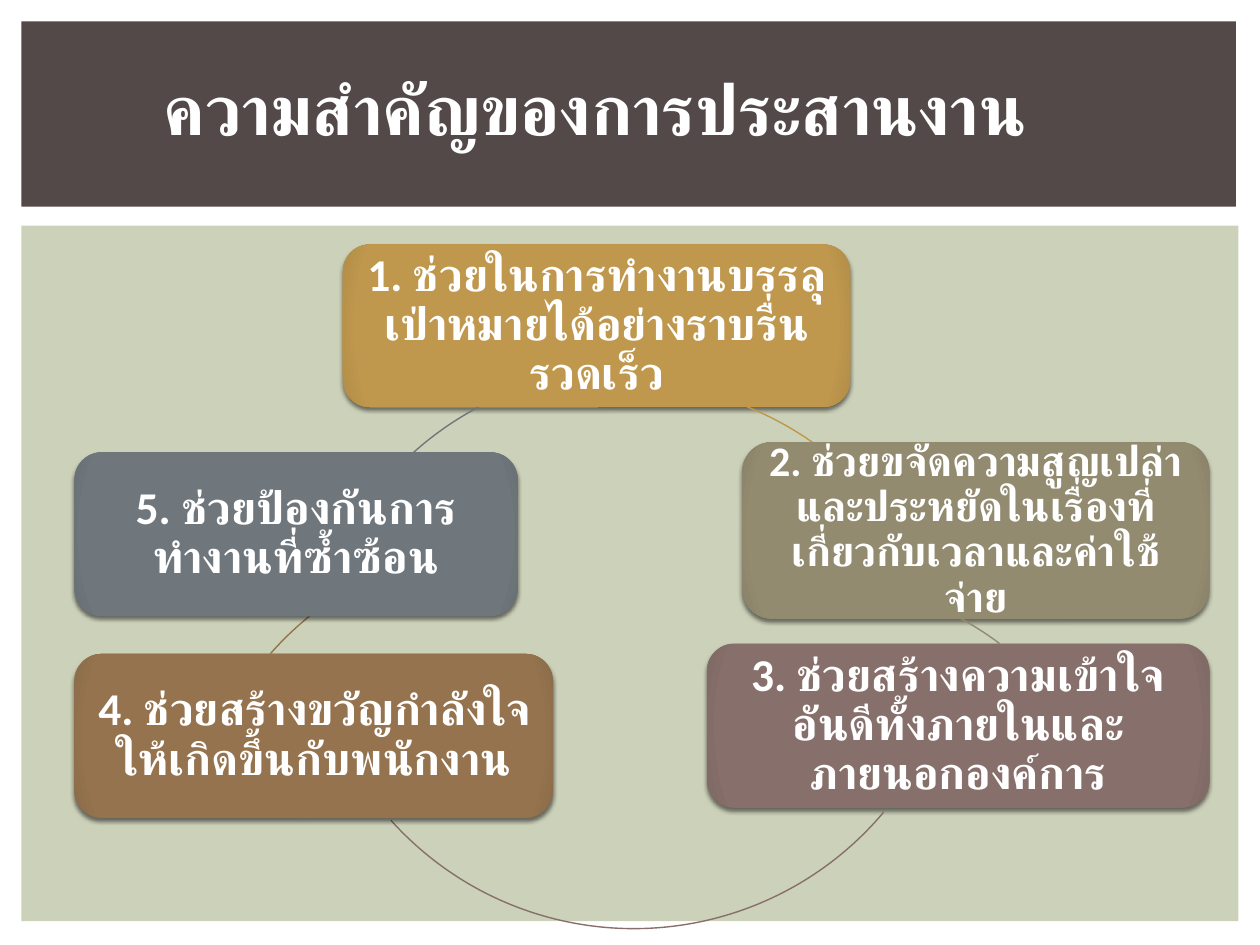
import pptx
import pptx.dml.color
import pptx.enum.shapes
import pptx.enum.text
import pptx.oxml
import pptx.oxml.ns
import pptx.util

Inches = pptx.util.Inches
Pt = pptx.util.Pt
RGBColor = pptx.dml.color.RGBColor
MSO_SHAPE = pptx.enum.shapes.MSO_SHAPE
MSO_ANCHOR = pptx.enum.text.MSO_ANCHOR
MSO_AUTO_SIZE = pptx.enum.text.MSO_AUTO_SIZE
PP_ALIGN = pptx.enum.text.PP_ALIGN

WHITE = RGBColor(0xFF, 0xFF, 0xFF)
SAGE = RGBColor(0xCC, 0xD1, 0xB9)
CHARCOAL = RGBColor(0x53, 0x49, 0x49)
GOLD = RGBColor(0xBF, 0x97, 0x4D)
GOLD_EDGE = RGBColor(0xB2, 0x8D, 0x48)
OLIVE = RGBColor(0x92, 0x8B, 0x70)
OLIVE_EDGE = RGBColor(0x88, 0x82, 0x68)
MAUVE = RGBColor(0x87, 0x70, 0x6B)
MAUVE_EDGE = RGBColor(0x7E, 0x68, 0x64)
BROWN = RGBColor(0x94, 0x73, 0x4E)
BROWN_EDGE = RGBColor(0x8A, 0x6B, 0x49)
SLATE = RGBColor(0x6F, 0x77, 0x7D)
SLATE_EDGE = RGBColor(0x67, 0x6F, 0x74)

RING_SIZE = 5.18
TEXT_MARGIN = 0.065
NAMESPACE = pptx.oxml.ns.nsdecls("a")
GRADIENT = (
    "<a:gradFill {0}><a:gsLst>"
    '<a:gs pos="0"><a:srgbClr val="{1}"/></a:gs>'
    '<a:gs pos="90000"><a:srgbClr val="{1}"/></a:gs>'
    '<a:gs pos="100000"><a:srgbClr val="{2}"/></a:gs></a:gsLst>'
    '<a:path path="circle">'
    '<a:fillToRect l="100000" t="100000" r="100000" b="100000"/>'
    "</a:path></a:gradFill>"
)
SHADOW = (
    '<a:outerShdw {} blurRad="31750" dist="25400" dir="5400000" rotWithShape="0">'
    '<a:srgbClr val="000000"><a:alpha val="50000"/></a:srgbClr></a:outerShdw>'
)


def add_plain_shape(kind, left, top, width, height):
    shape = slide.shapes.add_shape(
        kind, Inches(left), Inches(top), Inches(width), Inches(height))
    shape.shadow.inherit = False
    shape.line.fill.background()
    return shape


def add_text(text, left, top, width, height, size, frame_format):
    box = slide.shapes.add_textbox(
        Inches(left), Inches(top), Inches(width), Inches(height))
    for name, value in {"word_wrap": True, **frame_format}.items():
        setattr(box.text_frame, name, value)
    paragraph = box.text_frame.paragraphs[0]
    paragraph.alignment = PP_ALIGN.CENTER
    run = paragraph.add_run()
    run.text = text
    run.font.color.rgb = WHITE
    for name, value in {"name": "Calibri", "size": Pt(size), "bold": True}.items():
        setattr(run.font, name, value)
    return paragraph


presentation = pptx.Presentation()
presentation.slide_width = Inches(10)
presentation.slide_height = Inches(7.5)
slide = presentation.slides.add_slide(presentation.slide_layouts[6])

for position, color in [
    ((0.17, 1.79, 9.66, 5.52), SAGE),
    ((0.17, 0.17, 9.64, 1.47), CHARCOAL),
]:
    panel = add_plain_shape(MSO_SHAPE.RECTANGLE, *position)
    panel.fill.solid()
    panel.fill.fore_color.rgb = color

benefits = [
    ("1. ช่วยในการทำงานบรรลุเป่าหมายได้อย่างราบรื่นรวดเร็ว", 26, 0.11,
     (2.72, 1.94, 4.03, 1.29), GOLD, GOLD_EDGE, (2.37, 3.04), (292, 305.1)),
    ("2. ช่วยขจัดความสูญเปล่าและประหยัดในเรื่องที่เกี่ยวกับเวลาและค่าใช้จ่าย", 24, 0.1,
     (5.89, 3.51, 3.71, 1.4), OLIVE, OLIVE_EDGE, (3.79, 4.59), (298.6, 306.8)),
    ("3. ช่วยสร้างความเข้าใจอันดีทั้งภายในและภายนอกองค์การ", 26, 0.11,
     (5.61, 5.11, 3.99, 1.3), MAUVE, MAUVE_EDGE, (2.44, 2.19), (40, 138.1)),
    ("4. ช่วยสร้างขวัญกำลังใจให้เกิดขึ้นกับพนักงาน", 26, 0.11,
     (0.59, 5.19, 3.8, 1.3), BROWN, BROWN_EDGE, (1.5, 4.31), (221.4, 231)),
    ("5. ช่วยป้องกันการทำงานที่ซ้ำซ้อน", 26, 0.11,
     (0.59, 3.59, 3.52, 1.3), SLATE, SLATE_EDGE, (2.42, 2.93), (228.1, 242.1)),
]

for text, size, inset, card_position, color, edge, ring_corner, angles in benefits:
    card = add_plain_shape(MSO_SHAPE.ROUNDED_RECTANGLE, *card_position)
    properties = card._element.spPr
    properties.find(pptx.oxml.ns.qn("a:ln")).addprevious(
        pptx.oxml.parse_xml(GRADIENT.format(NAMESPACE, color, edge)))
    properties.find(pptx.oxml.ns.qn("a:effectLst")).append(
        pptx.oxml.parse_xml(SHADOW.format(NAMESPACE)))

    left, top, width, height = card_position
    frame_format = {"vertical_anchor": MSO_ANCHOR.MIDDLE}
    for side in ("left", "top", "right", "bottom"):
        frame_format["margin_" + side] = Inches(inset)
    paragraph = add_text(
        text, left + TEXT_MARGIN, top + TEXT_MARGIN,
        width - 2 * TEXT_MARGIN, height - 2 * TEXT_MARGIN, size, frame_format)
    paragraph.line_spacing = 0.9

    arc = add_plain_shape(MSO_SHAPE.ARC, *ring_corner, RING_SIZE, RING_SIZE)
    arc.fill.background()
    arc.line.color.rgb = color
    arc.line.width = Pt(0.79)
    for index, angle in enumerate(angles):
        arc.adjustments[index] = angle * 0.6

add_text("ความสำคัญของการประสานงาน ", 0.12, 0.47, 9.36, 0.77, 40,
         {"auto_size": MSO_AUTO_SIZE.SHAPE_TO_FIT_TEXT})

presentation.save("out.pptx")
